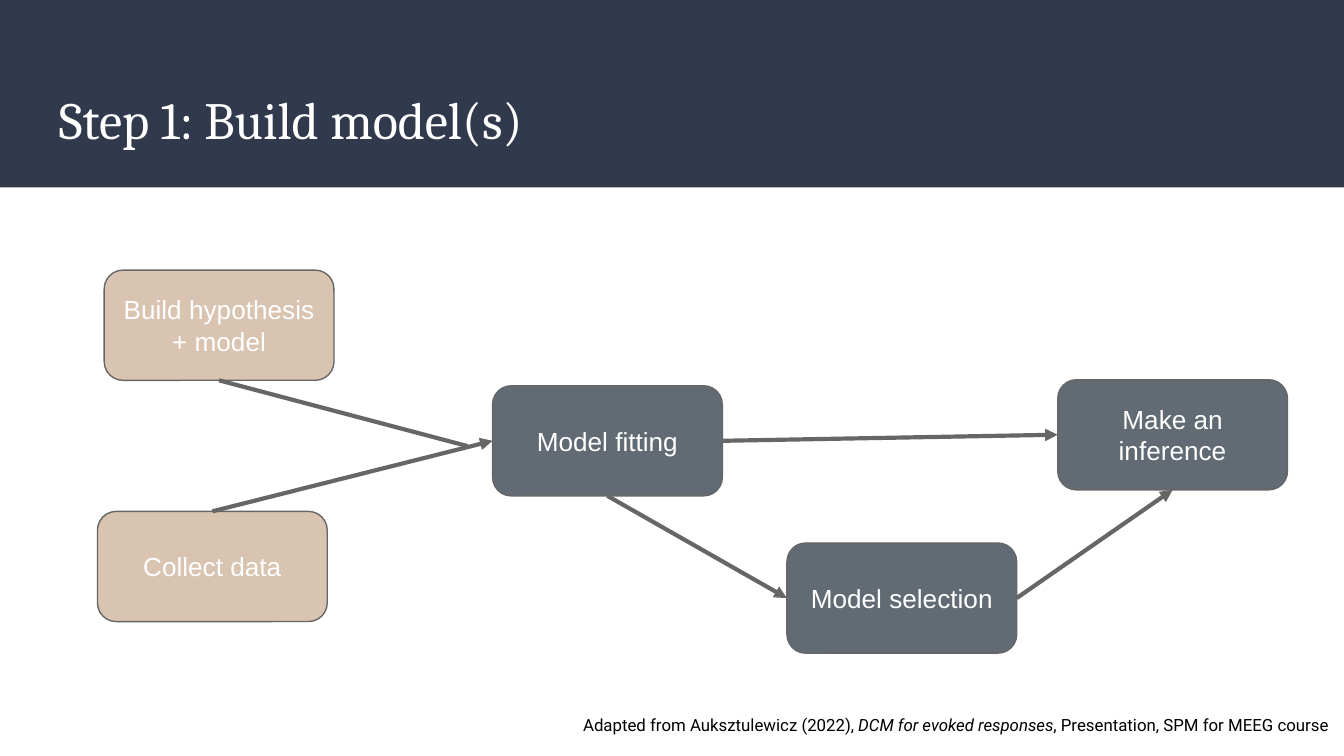
from dataclasses import dataclass

from pptx import Presentation
from pptx.dml.color import RGBColor
from pptx.enum.shapes import MSO_CONNECTOR, MSO_SHAPE
from pptx.enum.text import MSO_ANCHOR, PP_ALIGN
from pptx.oxml.ns import qn
from pptx.shapes.autoshape import Shape
from pptx.util import Inches, Length, Pt
from lxml import etree

NAVY = RGBColor(0x31, 0x39, 0x4D)
SAND = RGBColor(0xD9, 0xC4, 0xB1)
SLATE = RGBColor(0x62, 0x6B, 0x73)
GRAY = RGBColor(0x66, 0x66, 0x66)
WHITE = RGBColor(0xFF, 0xFF, 0xFF)
BLACK = RGBColor(0x00, 0x00, 0x00)

RECTANGLE = MSO_SHAPE.RECTANGLE
ROUNDED = MSO_SHAPE.ROUNDED_RECTANGLE
STRAIGHT = MSO_CONNECTOR.STRAIGHT
CENTER = PP_ALIGN.CENTER
MIDDLE = MSO_ANCHOR.MIDDLE

# Connection sites of a rounded rectangle
TOP, LEFT, BOTTOM, RIGHT = range(4)

# The 16:9 page is a grid of 100 columns by 56.25 rows, every cell 0.1 inch
COLUMNS, ROWS = 100, 56.25
BOX_COLUMNS, BOX_ROWS = 17.1, 8.2


@dataclass(frozen=True)
class Step:
    label: str
    column: float
    row: float
    fill: RGBColor


@dataclass(frozen=True)
class Arrow:
    start: str
    start_site: int
    end: str
    end_site: int


STEPS = {
    "data": Step("Collect data", 7.25, 38.05, SAND),
    "model": Step("Build hypothesis + model", 7.75, 20.1, SAND),
    "fitting": Step("Model fitting", 36.65, 28.7, SLATE),
    "selection": Step("Model selection", 58.55, 40.4, SLATE),
    "inference": Step("Make an inference", 78.7, 28.25, SLATE),
}

ARROWS = [
    Arrow("data", TOP, "fitting", LEFT),
    Arrow("fitting", BOTTOM, "selection", LEFT),
    Arrow("selection", RIGHT, "inference", BOTTOM),
    Arrow("fitting", RIGHT, "inference", LEFT),
]

# The model's line joins the data arrow just before its head
JUNCTION = (34.8, 33.2)


def cells(count: float) -> Length:
    return Inches(count / 10)


def style_text(shape: Shape, size: float, font: str, color: RGBColor) -> None:
    frame = shape.text_frame
    frame.margin_left = frame.margin_right = cells(1)
    frame.margin_top = frame.margin_bottom = cells(1)
    for para in frame.paragraphs:
        for span in para.runs:
            span.font.size = Pt(size)
            span.font.name = font
            span.font.color.rgb = color


def add_step(page, step: Step) -> Shape:
    box = page.shapes.add_shape(ROUNDED, cells(step.column), cells(step.row),
                                cells(BOX_COLUMNS), cells(BOX_ROWS))
    box.adjustments[0] = 0.17
    box.shadow.inherit = False
    box.fill.solid()
    box.fill.fore_color.rgb = step.fill
    box.line.color.rgb = GRAY
    box.line.width = Pt(0.75)
    frame = box.text_frame
    frame.text = step.label
    frame.word_wrap = True
    frame.vertical_anchor = MIDDLE
    frame.paragraphs[0].alignment = CENTER
    style_text(box, 14, "Arial", WHITE)
    return box


def add_line(page, box: Shape, site: int, head: bool = True):
    """Draw a line from a site of the box; its free end is at the junction."""
    column, row = JUNCTION
    line = page.shapes.add_connector(STRAIGHT, 0, 0, cells(column), cells(row))
    line.begin_connect(box, site)
    line.line.color.rgb = GRAY
    line.line.width = Pt(2.25)
    if head:
        etree.SubElement(line.line._get_or_add_ln(), qn("a:tailEnd"), type="triangle")
    etree.SubElement(line._element.spPr, qn("a:effectLst"))
    return line


def add_header(page) -> None:
    band = page.shapes.add_shape(RECTANGLE, 0, 0, cells(COLUMNS), cells(13.95))
    band.shadow.inherit = False
    band.fill.solid()
    band.fill.fore_color.rgb = NAVY
    band.line.fill.background()

    title = page.shapes.add_textbox(cells(3.4), cells(5.5), cells(93.2), cells(6.8))
    title.text_frame.text = "Step 1: Build model(s)"
    title.text_frame.word_wrap = True
    style_text(title, 28, "Cambria", WHITE)


def add_credit(page) -> None:
    credit = page.shapes.add_textbox(cells(42.4), cells(52.45), cells(57.6), cells(3.5))
    credit.text_frame.word_wrap = False
    para = credit.text_frame.paragraphs[0]
    for words, italic in (
        ("Adapted from Auksztulewicz (2022), ", False),
        ("DCM for evoked responses", True),
        (", Presentation, SPM for MEEG course", False),
    ):
        span = para.add_run()
        span.text = words
        span.font.italic = italic
    style_text(credit, 9, "Roboto", BLACK)


def main() -> None:
    deck = Presentation()
    deck.slide_width, deck.slide_height = cells(COLUMNS), cells(ROWS)
    page = deck.slides.add_slide(deck.slide_layouts[6])

    add_header(page)
    add_credit(page)

    # Flow chart: boxes first, then the lines glued to them
    boxes = {name: add_step(page, step) for name, step in STEPS.items()}
    for arrow in ARROWS:
        line = add_line(page, boxes[arrow.start], arrow.start_site)
        line.end_connect(boxes[arrow.end], arrow.end_site)
    add_line(page, boxes["model"], BOTTOM, head=False)

    deck.save("out.pptx")


if __name__ == "__main__":
    main()
